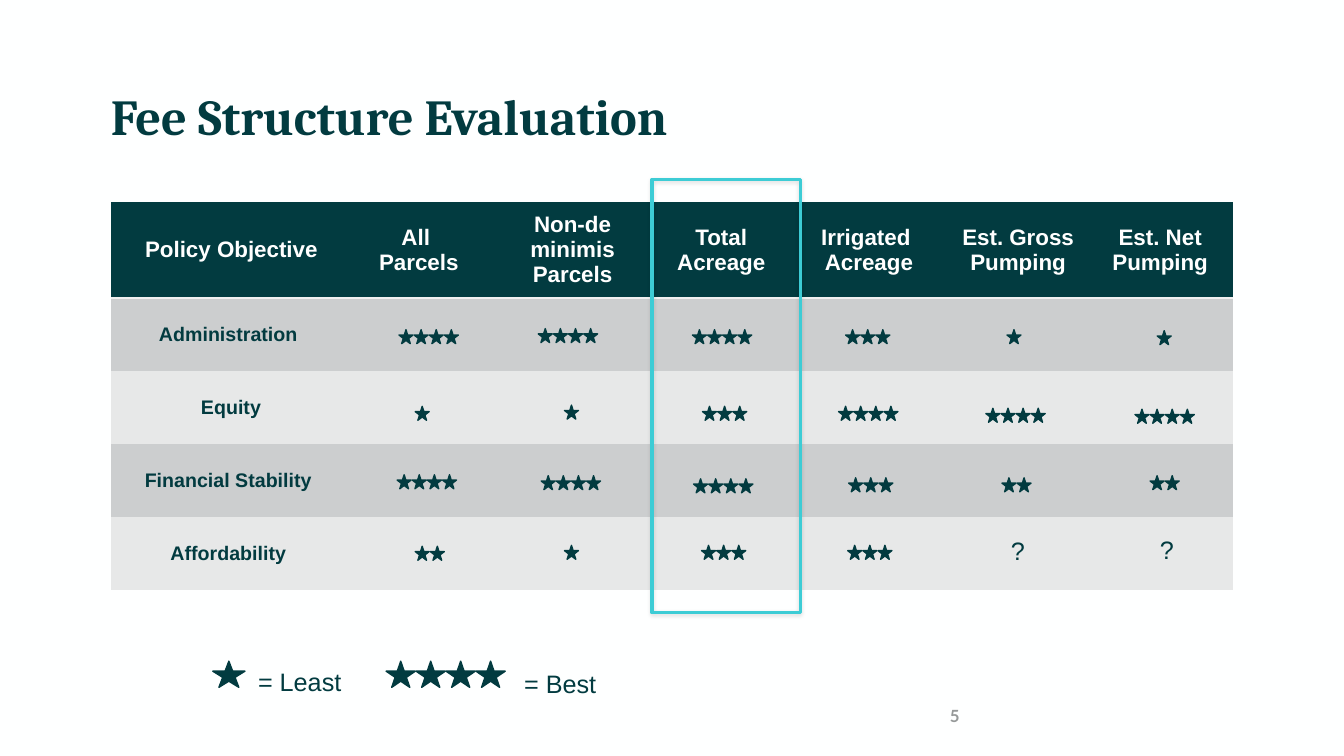
from pptx import Presentation
from pptx.dml.color import RGBColor
from pptx.enum.shapes import MSO_SHAPE
from pptx.enum.text import MSO_ANCHOR, MSO_AUTO_SIZE, PP_ALIGN
from pptx.oxml import parse_xml
from pptx.oxml.ns import nsdecls, qn
from pptx.util import Pt

TEAL = RGBColor(0x02, 0x3B, 0x40)
AQUA = RGBColor(0x3D, 0xCC, 0xD5)
WHITE = RGBColor(0xFF, 0xFF, 0xFF)
PAPER = RGBColor(0xFE, 0xFF, 0xFF)
GRAY = RGBColor(0x96, 0x99, 0x99)
BANDS = [RGBColor(0xCC, 0xCE, 0xCF), RGBColor(0xE7, 0xE8, 0xE8)]
NO_GRID = "{2D5ABB26-0587-4C30-8999-92F81FD0307C}"


def write(frame, text, size, color=TEAL, bold=False, align=PP_ALIGN.LEFT, name="Arial"):
    frame.text = text
    for para in frame.paragraphs:
        para.alignment = align
        font = para.runs[0].font
        font.color.rgb = color
        for key, value in {"size": Pt(size), "bold": bold, "name": name}.items():
            setattr(font, key, value)


def add_stars(count, left, top, width=10, height=10, step=10.8):
    """Draw a rating as a row of stars, grouped when there are several."""
    home = shapes.add_group_shape().shapes if count > 1 else shapes
    for i in range(count):
        star = home.add_shape(MSO_SHAPE.STAR_5_POINT, Pt(left + i * step), Pt(top),
                              Pt(width), Pt(height))
        star.shadow.inherit = False
        star.fill.solid()
        star.fill.fore_color.rgb = TEAL
        star.line.color.rgb = TEAL
        star.line.width = Pt(1)


deck = Presentation()
deck.slide_width, deck.slide_height = Pt(960), Pt(540)
slide = deck.slides.add_slide(deck.slide_layouts[5])
shapes = slide.shapes
slide.background.fill.solid()
slide.background.fill.fore_color.rgb = PAPER

# Title
title = shapes.title
title.left, title.top, title.width, title.height = Pt(79.2), Pt(46), Pt(801.4), Pt(98.6)
frame = title.text_frame
write(frame, "Fee Structure Evaluation", 36, bold=True, name="Cambria")
for key, value in {"margin_left": 0, "margin_right": 0, "margin_bottom": 0,
                   "margin_top": Pt(15), "vertical_anchor": MSO_ANCHOR.TOP,
                   "auto_size": MSO_AUTO_SIZE.NONE}.items():
    setattr(frame, key, value)

# Table
heads = [" Policy Objective", "All \nParcels", "Non-de minimis Parcels", "Total Acreage",
         "Irrigated \nAcreage", "Est. Gross Pumping", "Est. Net Pumping"]
goals = ["Administration", " Equity", "Financial Stability", "Affordability"]
widths = [167.8, 104.4, 115.2, 97.2, 113.8, 99.4, 103.6]
table = shapes.add_table(5, 7, Pt(79.2), Pt(144.3), Pt(801.4), Pt(277.2)).table
table.first_row = table.horz_banding = False
table._tbl.tblPr.find(qn("a:tableStyleId")).text = NO_GRID
for col, width in zip(table.columns, widths):
    col.width = Pt(width)
for r, row in enumerate(table.rows):
    row.height = Pt(52.2 if r else 68.4)
    for c, cell in enumerate(row.cells):
        cell.fill.solid()
        cell.fill.fore_color.rgb = BANDS[(r - 1) % 2] if r else TEAL
        cell.vertical_anchor = MSO_ANCHOR.MIDDLE
        cell.margin_left = cell.margin_right = cell.margin_top = cell.margin_bottom = 0
        if r == 0:
            write(cell.text_frame, heads[c], 16, WHITE, True, PP_ALIGN.CENTER)
            cell._tc.tcPr.insert(0, parse_xml(
                f'<a:lnB {nsdecls("a")} w="25400"><a:solidFill>'
                '<a:srgbClr val="F0F0F0"/></a:solidFill></a:lnB>'))
        elif c == 0:
            write(cell.text_frame, goals[r - 1], 14, TEAL, True, PP_ALIGN.CENTER)

# Ratings by objective: count, left, top
ratings = [
    [(4, 285, 235.5), (4, 384.5, 234.7), (4, 494.6, 235.5),
     (3, 604, 235.5), (1, 719.3, 235.5), (1, 826.6, 236.2)],
    [(1, 296.6, 290.2), (1, 403.2, 289.4), (3, 501.8, 290.2),
     (4, 599, 290.2), (4, 704.2, 291.6), (4, 810.7, 292.3)],
    [(4, 283.7, 339.1), (4, 386.6, 339.8), (4, 495.4, 342),
     (3, 606.2, 341.3), (2, 715.7, 341.3), (2, 821.5, 339.8)],
    [(2, 296.6, 390.2), (1, 403.2, 389.5), (3, 501.1, 389.5), (3, 605.5, 389.5)],
]
for goal in ratings:
    for rating in goal:
        add_stars(*rating)
for left, top in [(715, 378.7), (821.5, 378)]:
    frame = shapes.add_textbox(Pt(left), Pt(top), Pt(24.5), Pt(28.8)).text_frame
    frame.word_wrap = False
    frame.auto_size = MSO_AUTO_SIZE.SHAPE_TO_FIT_TEXT
    write(frame, "?", 18)

# Legend
add_stars(1, 152, 472.3, 23, 18.7)
add_stars(4, 275.8, 472.3, 20.9, 18.7, 21.4)
for text, left, top in [("= Least", 184.3, 466.6), ("= Best", 374.4, 468)]:
    frame = shapes.add_textbox(Pt(left), Pt(top), Pt(152.6), Pt(31)).text_frame
    write(frame, text, 18)
    for key, value in {"word_wrap": True, "auto_size": MSO_AUTO_SIZE.SHAPE_TO_FIT_TEXT,
                       "margin_left": 0, "margin_right": Pt(17.3),
                       "margin_top": Pt(2.9), "margin_bottom": Pt(2.9)}.items():
        setattr(frame, key, value)
    frame.paragraphs[0].line_spacing = 1.3
    frame.paragraphs[0].space_before = Pt(10)

# Highlight around Total Acreage
box = shapes.add_shape(MSO_SHAPE.RECTANGLE, Pt(465.8), Pt(128.2), Pt(105.8), Pt(309.6))
box.fill.background()
box.line.color.rgb = AQUA
box.line.width = Pt(2.25)
box.shadow.inherit = False
box._element.spPr.find(qn("a:effectLst")).append(parse_xml(
    f'<a:outerShdw {nsdecls("a")} blurRad="38100" dist="12700" dir="5400000" rotWithShape="0">'
    '<a:srgbClr val="000000"><a:alpha val="15000"/></a:srgbClr></a:outerShdw>'))

# Slide number
frame = shapes.add_textbox(Pt(530.6), Pt(496.8), Pt(162), Pt(28.8)).text_frame
frame.word_wrap = True
frame.vertical_anchor = MSO_ANCHOR.MIDDLE
write(frame, "5", 12, GRAY, True, PP_ALIGN.RIGHT, "Lato")

deck.save("out.pptx")
